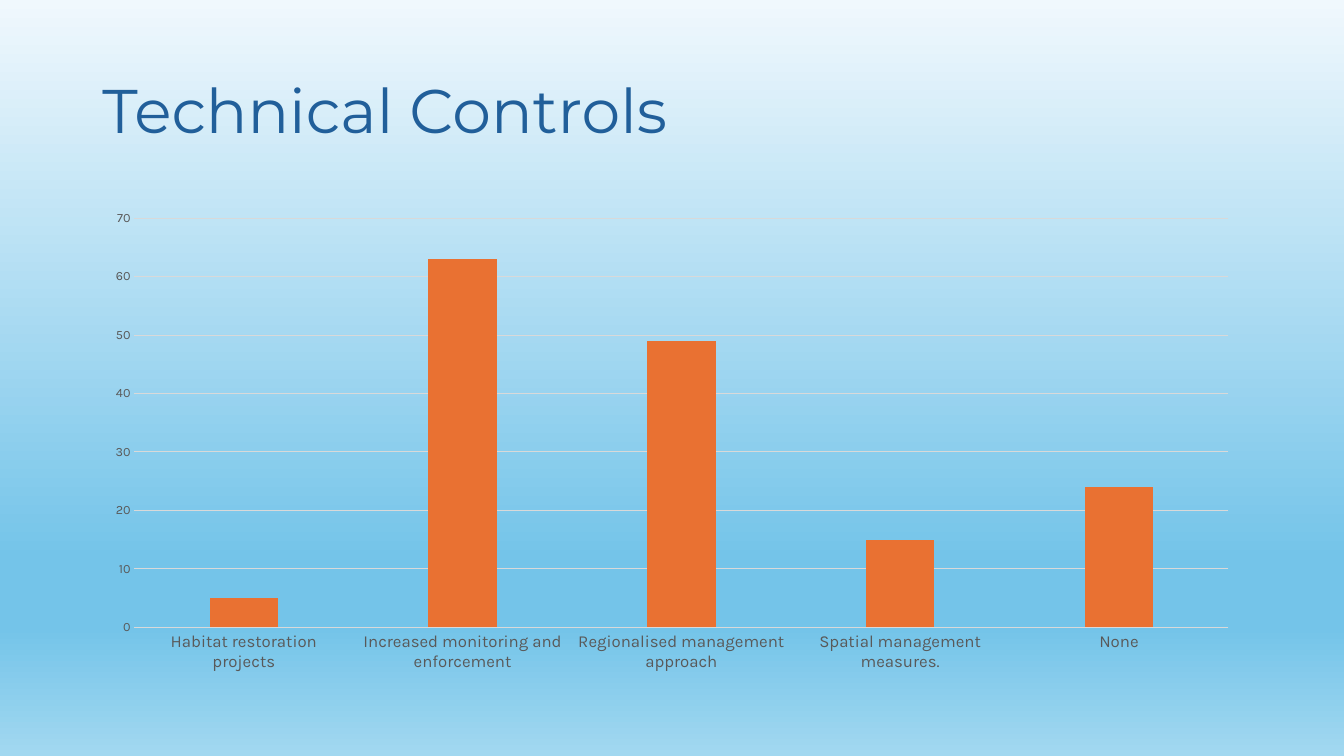
from copy import deepcopy
from dataclasses import dataclass

from pptx import Presentation
from pptx.chart.data import CategoryChartData
from pptx.dml.color import RGBColor
from pptx.enum.chart import XL_CHART_TYPE as ChartType, XL_TICK_MARK as TickMark
from pptx.enum.text import MSO_ANCHOR as Anchor, PP_ALIGN as Align
from pptx.oxml.ns import qn
from pptx.util import Pt


@dataclass(frozen=True)
class Theme:
    title_font: str = "Montserrat"
    chart_font: str = "Karla"
    title_size: int = 44
    chart_size: int = 10
    category_size: int = 12
    value_size: int = 9
    title_color: str = "215F9A"
    chart_color: str = "000000"
    label_color: str = "595959"
    grid_color: str = "D9D9D9"
    bar_color: str = "E97132"
    background: tuple = ((0, "F0F8FD"), (0.74, "74C4E9"), (0.83, "74C4E9"), (1, "A2D8F0"))


def style_font(font, name, size, color):
    font.name = name
    font.size = Pt(size)
    font.color.rgb = RGBColor.from_string(color)


def style_line(line):
    line.width = Pt(0.75)
    line.color.rgb = RGBColor.from_string(theme.grid_color)


theme = Theme()
presentation = Presentation()
presentation.slide_width = Pt(960)
presentation.slide_height = Pt(540)
slide = presentation.slides.add_slide(presentation.slide_layouts[5])

background = slide.background.fill
background.gradient()
background.gradient_angle = 270
stop_list = slide.element.find(".//" + qn("a:gsLst"))
while len(stop_list) < len(theme.background):
    stop_list.append(deepcopy(stop_list[0]))
for stop, (position, color) in zip(background.gradient_stops, theme.background):
    stop.position = position
    stop.color.rgb = RGBColor.from_string(color)

title = slide.shapes.title
title.left, title.top, title.width, title.height = Pt(66), Pt(28.75), Pt(828), Pt(104.4)
title.text_frame.vertical_anchor = Anchor.MIDDLE
title.text_frame.word_wrap = True
paragraph = title.text_frame.paragraphs[0]
paragraph.alignment = Align.LEFT
paragraph.line_spacing = 0.9
run = paragraph.add_run()
run.text = "Technical Controls"
style_font(run.font, theme.title_font, theme.title_size, theme.title_color)

controls = {
    "Habitat restoration projects": 5,
    "Increased monitoring and enforcement": 63,
    "Regionalised management approach": 49,
    "Spatial management measures.": 15,
    "None": 24,
}
chart_data = CategoryChartData()
chart_data.categories = list(controls)
chart_data.add_series("Series 1", list(controls.values()))
chart = slide.shapes.add_chart(
    ChartType.COLUMN_CLUSTERED, Pt(66), Pt(143.75), Pt(828), Pt(342.6), chart_data
).chart
chart.has_title = False
chart.has_legend = False
style_font(chart.font, theme.chart_font, theme.chart_size, theme.chart_color)

plot = chart.plots[0]
plot.gap_width = 219
plot.overlap = -27
plot.vary_by_categories = False
bars = plot.series[0].format.fill
bars.solid()
bars.fore_color.rgb = RGBColor.from_string(theme.bar_color)

category_axis, value_axis = chart.category_axis, chart.value_axis
for axis, size in ((category_axis, theme.category_size), (value_axis, theme.value_size)):
    axis.major_tick_mark = TickMark.NONE
    axis.minor_tick_mark = TickMark.NONE
    style_font(axis.tick_labels.font, theme.chart_font, size, theme.label_color)
style_line(category_axis.format.line)
value_axis.format.line.fill.background()
value_axis.minimum_scale = 0
value_axis.maximum_scale = 70
value_axis.major_unit = 10
style_line(value_axis.major_gridlines.format.line)

presentation.save("out.pptx")
